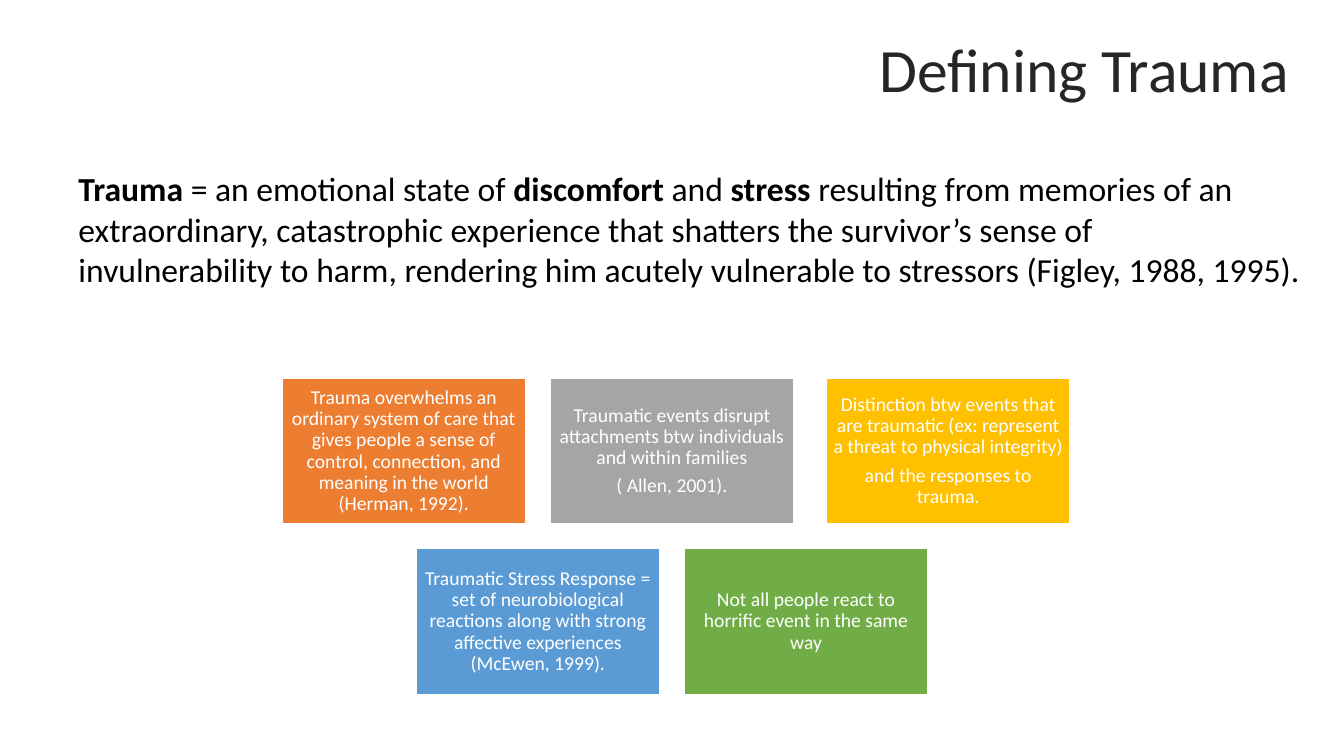
"""Build the Defining Trauma slide."""
import pptx
import pptx.util
import pptx.dml.color
import pptx.enum.shapes
import pptx.enum.text

Inches = pptx.util.Inches
Pt = pptx.util.Pt
ALIGN = pptx.enum.text.PP_ALIGN
MIDDLE = pptx.enum.text.MSO_ANCHOR.MIDDLE

COLORS = {
    "title": "262626", "text": "000000", "white": "FFFFFF",
    "orange": "ED7D31", "gray": "A5A5A5", "gold": "FFC000",
    "blue": "5B9BD5", "green": "70AD47",
}
GRID_LEFT, GRID_TOP = 2.8, 3.75
COLUMN_STEP, ROW_STEP = 2.66, 1.69
TILE_WIDTH, TILE_HEIGHT = 2.41, 1.45

DEFINITION = [
    [("Trauma", True), (" = an emotional state of ", False), ("discomfort", True),
     (" and ", False), ("stress", True),
     (" resulting from memories of an", False)],
    [("extraordinary, catastrophic experience that shatters the survivor’s sense of", False)],
    [("invulnerability to harm, rendering him acutely vulnerable to stressors "
      "(Figley, 1988, 1995).", False)],
]
TILES = [
    (0, 0, "orange", ["Trauma overwhelms an ordinary system of care that gives people a sense "
                      "of control, connection, and meaning in the world (Herman, 1992)."]),
    (1, 0, "gray", ["Traumatic events disrupt attachments btw individuals and within families",
                    "(\u00a0Allen, 2001)."]),
    (2.03, 0, "gold", ["Distinction btw events that are traumatic (ex: represent a threat to "
                       "physical integrity)", "and the responses to trauma."]),
    (0.5, 1, "blue", ["Traumatic Stress Response = set of neurobiological reactions along with "
                      "strong affective experiences (McEwen, 1999)."]),
    (1.5, 1, "green", ["Not all people react to horrific event in the same way"]),
]


def color(name):
    """Return the named palette colour."""
    return pptx.dml.color.RGBColor.from_string(COLORS[name])


def style(para, size, name):
    """Set the font of a whole paragraph."""
    para.font.name = "Calibri"
    para.font.size = Pt(size)
    para.font.color.rgb = color(name)


def add_title(page, text):
    """Fill and place the title placeholder."""
    title = page.shapes.title
    title.left, title.top = Inches(8.62), Inches(0)
    title.width, title.height = Inches(4.71), Inches(1.43)
    frame = title.text_frame
    frame.text = text
    frame.auto_size = pptx.enum.text.MSO_AUTO_SIZE.NONE
    frame.vertical_anchor = MIDDLE
    para = frame.paragraphs[0]
    para.alignment = ALIGN.LEFT
    para.line_spacing = 0.9
    style(para, 44, "title")


def add_definition(page, lines):
    """Add the definition with its key words in bold."""
    box = page.shapes.add_textbox(Inches(0.68), Inches(1.62), Inches(12.65), Inches(1.62))
    frame = box.text_frame
    frame.word_wrap = True
    for index, line in enumerate(lines):
        para = frame.add_paragraph() if index else frame.paragraphs[0]
        style(para, 24, "text")
        for text, bold in line:
            span = para.add_run()
            span.text = text
            span.font.bold = bold


def add_tile(page, column, row, fill, texts):
    """Add a coloured tile at a grid position."""
    tile = page.shapes.add_shape(
        pptx.enum.shapes.MSO_SHAPE.RECTANGLE,
        Inches(GRID_LEFT + column * COLUMN_STEP), Inches(GRID_TOP + row * ROW_STEP),
        Inches(TILE_WIDTH), Inches(TILE_HEIGHT))
    tile.shadow.inherit = False
    tile.fill.solid()
    tile.fill.fore_color.rgb = color(fill)
    tile.line.color.rgb = color("white")
    tile.line.width = Pt(1)
    frame = tile.text_frame
    frame.word_wrap = True
    frame.vertical_anchor = MIDDLE
    frame.margin_left = frame.margin_right = Inches(0.06)
    frame.margin_top = frame.margin_bottom = Inches(0.06)
    frame.text = "\n".join(texts)
    for para in frame.paragraphs:
        para.alignment = ALIGN.CENTER
        para.line_spacing = 0.9
        para.space_after = Pt(5)
        style(para, 14, "white")


def main():
    """Build and save the deck."""
    deck = pptx.Presentation()
    deck.slide_width, deck.slide_height = Inches(13.33), Inches(7.5)
    page = deck.slides.add_slide(deck.slide_layouts[5])
    add_title(page, "Defining Trauma")
    for tile in TILES:
        add_tile(page, *tile)
    add_definition(page, DEFINITION)
    deck.save("out.pptx")


if __name__ == "__main__":
    main()
